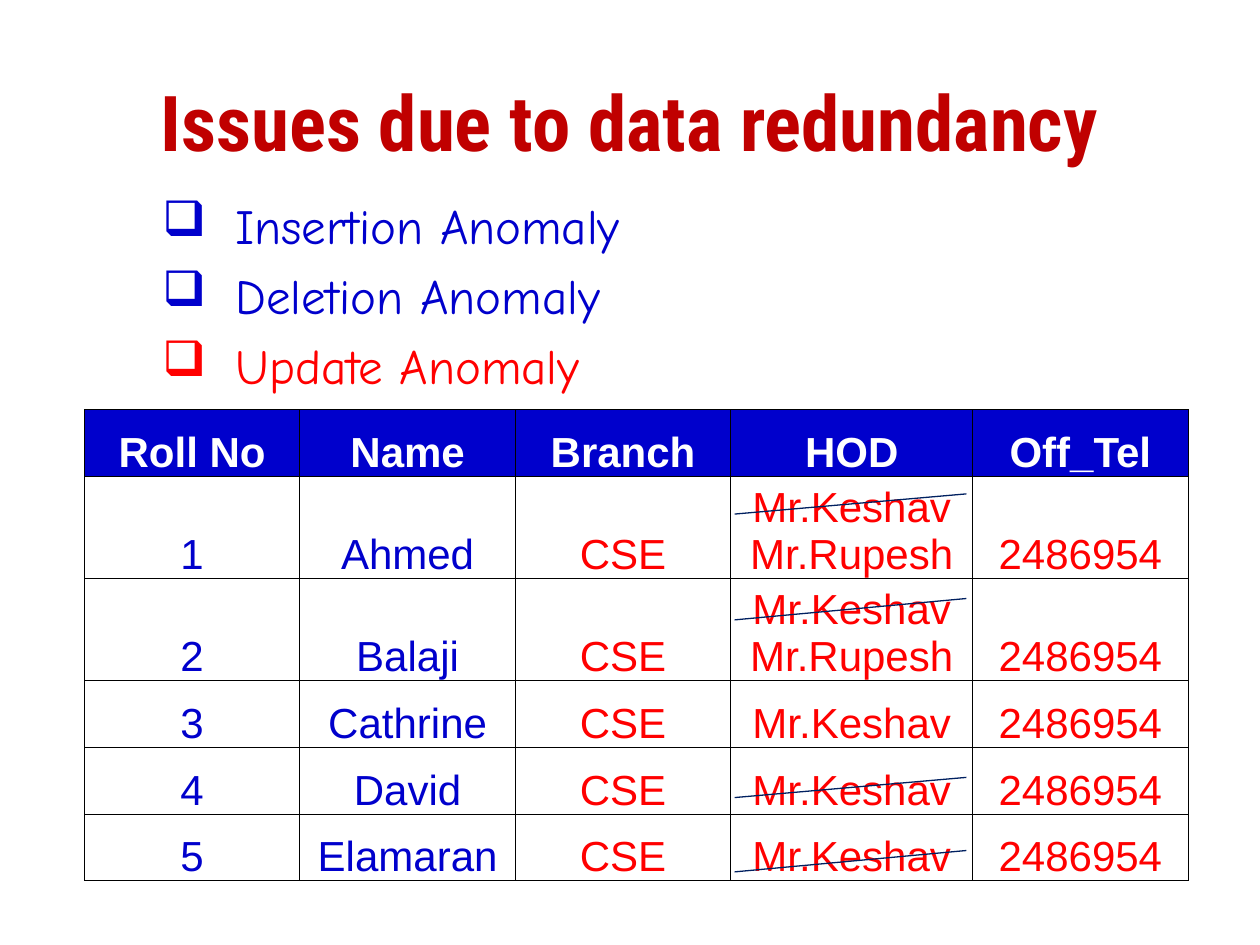
from lxml import etree
from pptx import Presentation
from pptx.dml.color import RGBColor
from pptx.enum import shapes, text
from pptx.oxml import ns
from pptx.util import Inches, Pt

# Content
COLORS = {"title": "C00000", "blue": "0000CC", "red": "FF0000",
          "white": "FFFFFF", "strike": "002060", "border": "000000"}
TITLE = "Issues due to data redundancy"
ANOMALIES = [("Insertion Anomaly", "blue"), ("Deletion Anomaly", "blue"),
             ("Update Anomaly", "red")]
HEADER = ["Roll No", "Name", "Branch", "HOD", "Off_Tel"]
OLD_HOD, NEW_HOD = "Mr.Keshav", "Mr.Rupesh"
STUDENTS = [("Ahmed", [OLD_HOD, NEW_HOD]), ("Balaji", [OLD_HOD, NEW_HOD]),
            ("Cathrine", [OLD_HOD]), ("David", [OLD_HOD]),
            ("Elamaran", [OLD_HOD])]
BRANCH, PHONE = "CSE", "2486954"

# Layout in inches
COL_WIDTHS = [1.71, 1.71, 1.71, 1.92, 1.71]
LINE_ROW, TWO_LINE_ROW = 0.53, 0.81
STRIKE_X = (5.83, 7.67)
STRIKE_Y = [(4.08, 3.92), (4.92, 4.75), (6.33, 6.17), (6.92, 6.75)]


def rgb(name):
    return RGBColor.from_string(COLORS[name])


def add_run(p, words, size, font, color, bold=False):
    r = p.add_run()
    r.text = words
    r.font.size, r.font.name, r.font.bold = Pt(size), font, bold
    r.font.color.rgb = rgb(color)


def add_text_frame(s, left, top, width, height, anchor):
    box = s.shapes.add_textbox(*map(Inches, (left, top, width, height)))
    tf = box.text_frame
    tf.word_wrap = True
    tf.vertical_anchor = anchor
    return tf


def paragraphs(tf, count):
    return [tf.paragraphs[0]] + [tf.add_paragraph() for _ in range(count - 1)]


def add_bullet(p, indent, hanging):
    pPr = p._p.get_or_add_pPr()
    pPr.set("marL", str(Inches(indent)))
    pPr.set("indent", str(Inches(hanging)))
    etree.SubElement(pPr, ns.qn("a:buChar")).set("char", "❑")


def add_borders(cell):
    tcPr = cell._tc.get_or_add_tcPr()
    for side in ("lnL", "lnR", "lnT", "lnB"):
        ln = etree.SubElement(tcPr, ns.qn("a:" + side), w=str(Pt(0.5)))
        fill = etree.SubElement(ln, ns.qn("a:solidFill"))
        etree.SubElement(fill, ns.qn("a:srgbClr"), val=COLORS["border"])


def fill_cell(cell, lines, color, header):
    cell.margin_left = cell.margin_right = cell.margin_top = Inches(0.01)
    cell.margin_bottom = 0
    cell.vertical_anchor = text.MSO_ANCHOR.BOTTOM
    add_borders(cell)
    if header:
        cell.fill.solid()
        cell.fill.fore_color.rgb = rgb("blue")
    else:
        cell.fill.background()
    for p, line in zip(paragraphs(cell.text_frame, len(lines)), lines):
        p.alignment = text.PP_ALIGN.CENTER
        add_run(p, line, 24, "Arial", color, header)


def add_student_table(s):
    rows = [[[name] for name in HEADER]]
    for number, (name, hods) in enumerate(STUDENTS, 1):
        rows.append([[str(number)], [name], [BRANCH], hods, [PHONE]])
    heights = [TWO_LINE_ROW if len(row[3]) > 1 else LINE_ROW for row in rows]
    table = s.shapes.add_table(
        len(rows), len(HEADER), Inches(0.67), Inches(3.25),
        Inches(sum(COL_WIDTHS)), Inches(sum(heights))).table
    table.horz_banding = False
    for column, width in zip(table.columns, COL_WIDTHS):
        column.width = Inches(width)
    for i, row in enumerate(rows):
        table.rows[i].height = Inches(heights[i])
        for j, lines in enumerate(row):
            color = "white" if i == 0 else "blue" if j < 2 else "red"
            fill_cell(table.cell(i, j), lines, color, i == 0)


def add_strike(s, y_start, y_end):
    line = s.shapes.add_connector(
        shapes.MSO_CONNECTOR.STRAIGHT, Inches(STRIKE_X[0]), Inches(y_start),
        Inches(STRIKE_X[1]), Inches(y_end))
    line.line.color.rgb = rgb("strike")
    line.line.width = Pt(0.75)
    etree.SubElement(line._element.spPr, ns.qn("a:effectLst"))


def main():
    prs = Presentation()
    prs.slide_width, prs.slide_height = Inches(10), Inches(7.5)
    s = prs.slides.add_slide(prs.slide_layouts[6])

    # Title
    tf = add_text_frame(s, 0.75, 0.33, 8.5, 1.25, text.MSO_ANCHOR.MIDDLE)
    tf.paragraphs[0].alignment = text.PP_ALIGN.CENTER
    add_run(tf.paragraphs[0], TITLE, 44, "Roboto Condensed", "title", True)

    # Anomaly list
    tf = add_text_frame(s, 0.75, 1.5, 8.5, 4.5, text.MSO_ANCHOR.TOP)
    for p, (words, color) in zip(paragraphs(tf, len(ANOMALIES)), ANOMALIES):
        p.space_before = Pt(6.5)
        add_bullet(p, 1.02, -0.58)
        add_run(p, words, 28, "Comic Neue", color)

    # Student table with the outdated entries struck through
    add_student_table(s)
    for y_start, y_end in STRIKE_Y:
        add_strike(s, y_start, y_end)

    prs.save("out.pptx")


if __name__ == "__main__":
    main()
